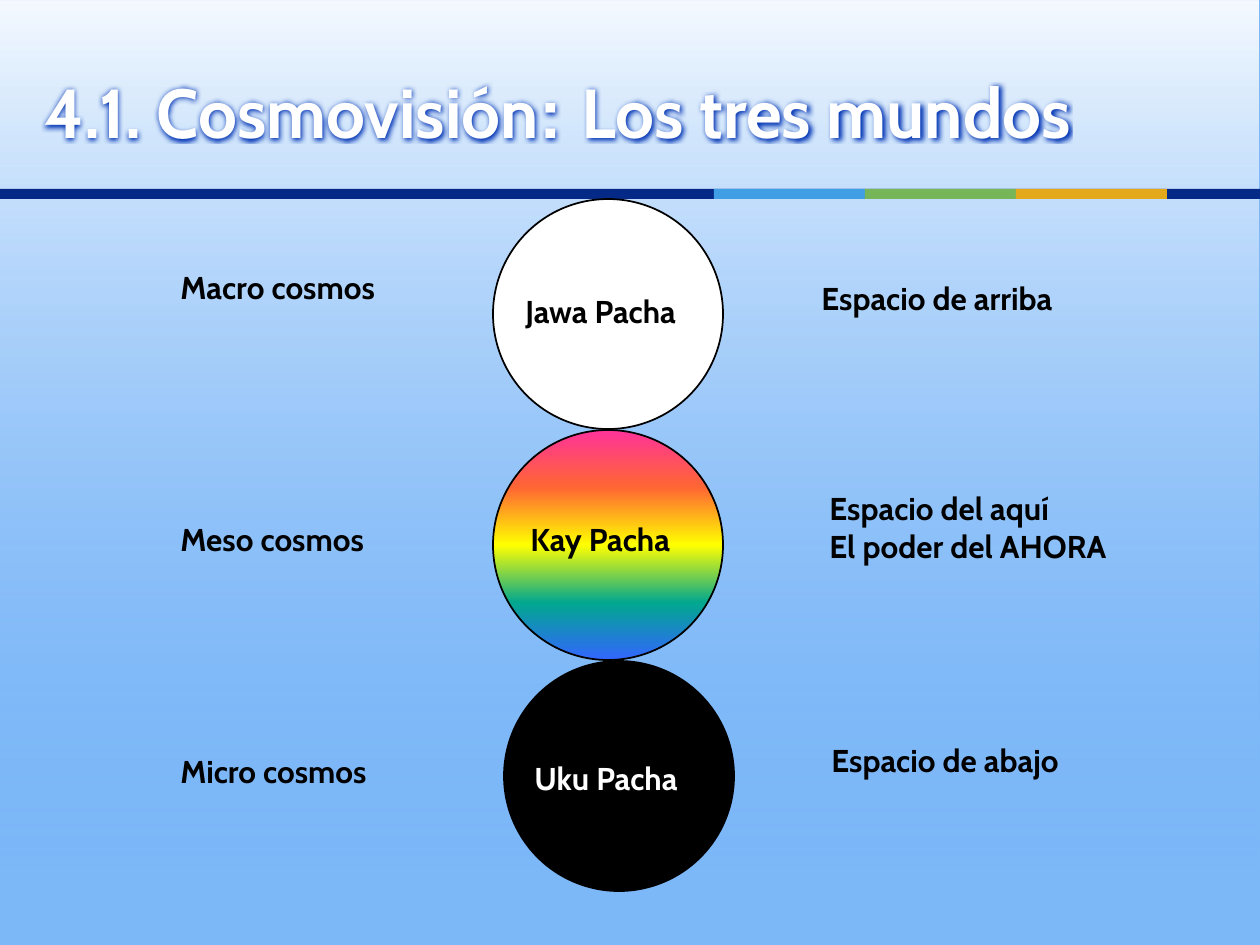
from lxml import etree
from pptx import Presentation
from pptx.dml.color import RGBColor
from pptx.enum.shapes import MSO_SHAPE
from pptx.enum.text import MSO_ANCHOR
from pptx.oxml.ns import qn
from pptx.util import Pt

RECTANGLE, OVAL = MSO_SHAPE.RECTANGLE, MSO_SHAPE.OVAL
TOP, MIDDLE = MSO_ANCHOR.TOP, MSO_ANCHOR.MIDDLE
SCALE = 914400 / 126
WIDTH, HEIGHT = 1260, 945
SKY, NAVY, BLACK, WHITE = "7CB7F8", "042986", "000000", "FFFFFF"


def emu(*lengths):
    return [round(length * SCALE) for length in lengths]


def color(value):
    return RGBColor.from_string(value)


def add_node(parent, tag, **attributes):
    values = {name: str(value) for name, value in attributes.items()}
    return etree.SubElement(parent, qn(tag), values)


class SlideBuilder:
    font, text_size = "Cabin", 18

    def __init__(self, slide):
        self.slide = slide

    def background(self, value):
        fill = self.slide.background.fill
        fill.solid()
        fill.fore_color.rgb = color(value)

    def shape(self, kind, left, top, width, height, fill=None, line=None):
        shape = self.slide.shapes.add_shape(kind, *emu(left, top, width, height))
        shape.shadow.inherit = False
        if fill:
            shape.fill.solid()
            shape.fill.fore_color.rgb = color(fill)
        if line:
            shape.line.color.rgb = color(line)
            shape.line.width = Pt(1)
        else:
            shape.line.fill.background()
        return shape

    def gradient(self, shape, stops, angle):
        """Fill with stops of (percent, colour, opacity percent)."""
        gradient = etree.Element(qn("a:gradFill"), rotWithShape="1")
        stop_list = add_node(gradient, "a:gsLst")
        for position, value, opacity in stops:
            stop = add_node(stop_list, "a:gs", pos=position * 1000)
            tint = add_node(stop, "a:srgbClr", val=value)
            if opacity < 100:
                add_node(tint, "a:alpha", val=opacity * 1000)
        add_node(gradient, "a:lin", ang=angle * 60000, scaled=0)
        shape.element.spPr.find(qn("a:prstGeom")).addnext(gradient)

    def text(self, left, top, width, height, *lines, size=None, fill=BLACK,
             anchor=TOP, glow=None):
        """Write lines, each a list of (text, font) spans or a plain string."""
        box = self.slide.shapes.add_textbox(*emu(left, top, width, height))
        frame = box.text_frame
        frame.word_wrap = True
        frame.vertical_anchor = anchor
        for index, line in enumerate(lines):
            para = frame.add_paragraph() if index else frame.paragraphs[0]
            spans = [(line, self.font)] if isinstance(line, str) else line
            for words, font in spans:
                span = para.add_run()
                span.text = words
                span.font.name = font
                span.font.size = Pt(size or self.text_size)
                span.font.bold = True
                span.font.color.rgb = color(fill)
                if glow:
                    self.glow(span, glow)

    def glow(self, span, value):
        effects = etree.Element(qn("a:effectLst"))
        halo = add_node(effects, "a:glow", rad=Pt(5))
        add_node(halo, "a:srgbClr", val=value)
        span.font._element.find(qn("a:solidFill")).addnext(effects)


def main():
    deck = Presentation()
    deck.slide_width, deck.slide_height = emu(WIDTH, HEIGHT)
    page = SlideBuilder(deck.slides.add_slide(deck.slide_layouts[6]))

    # Sky background
    page.background(SKY)
    sky = page.shape(RECTANGLE, -1, 0, WIDTH, 867)
    page.gradient(sky, [(1, SKY, 0), (100, WHITE, 92)], 270)

    # Divider with three coloured segments
    page.shape(RECTANGLE, 0, 189, WIDTH, 10, NAVY)
    segment = 151
    for index, fill in enumerate(("3F9EE4", "77B559", "E4A81B")):
        page.shape(RECTANGLE, 714 + index * segment, 189, segment, 10, fill)

    # Title
    title = [("4.1. Cosmovisión", "Cabin"), (": ", "Arial"),
             ("Los tres mundos", "Cabin")]
    page.text(32, 53, 1207, 116, title, size=39.6, fill=WHITE,
              anchor=MIDDLE, glow="0033B4")

    # The three worlds
    diameter, pitch = 230, 231
    worlds = [(493, WHITE), (493, None), (504, BLACK)]
    circles = [page.shape(OVAL, left, 199 + index * pitch, diameter, diameter,
                          fill, line=BLACK)
               for index, (left, fill) in enumerate(worlds)]
    rainbow = ("FF3399", "FF6633", "FFFF00", "01A78F", "3366FF")
    page.gradient(circles[1], [(index * 25, value, 100)
                               for index, value in enumerate(rainbow)], 90)

    # World names
    page.text(513, 286, 205, 50, "Jawa Pacha")
    page.text(518, 514, 220, 63, "Kay Pacha")
    page.text(522, 753, 188, 50, "Uku Pacha", fill=WHITE)

    # Cosmos levels on the left
    for top, level in ((262, "Macro cosmos"), (514, "Meso cosmos"),
                       (746, "Micro cosmos")):
        page.text(168, top, 283, 63, level)

    # Spaces on the right
    page.text(809, 273, 343, 63, "Espacio de arriba")
    page.text(817, 483, 431, 89, "Espacio del aquí", "El poder del AHORA")
    page.text(819, 735, 329, 63, "Espacio de abajo")

    deck.save("out.pptx")


if __name__ == "__main__":
    main()
